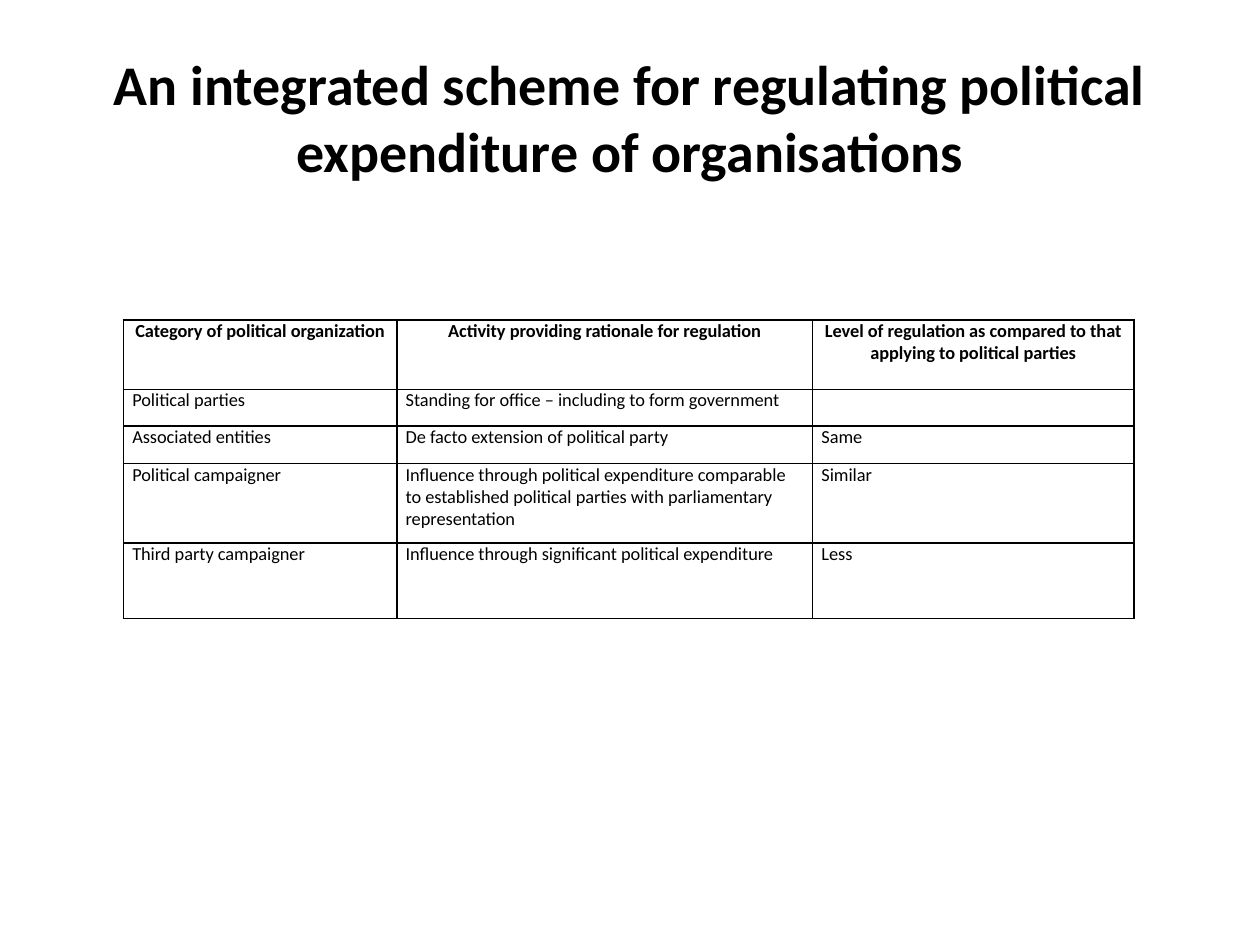
from lxml.etree import SubElement
from pptx import Presentation
from pptx.dml.color import RGBColor
from pptx.enum.text import MSO_ANCHOR, PP_ALIGN
from pptx.oxml.ns import qn
from pptx.util import Inches, Pt

COLORS = {"text": "000000", "border": "000000", "background": "FFFFFF"}
FONT = "Calibri"
TITLE = "An integrated scheme for regulating political expenditure of organisations"
COLUMN_WIDTHS = [2.17, 3.3, 2.55]
ROW_HEIGHTS = [0.55, 0.29, 0.3, 0.63, 0.6]
ROWS = [
    ["Category of political organization",
     "Activity providing rationale for regulation",
     "Level of regulation as compared to that applying to political parties"],
    ["Political parties", "Standing for office – including to form government", ""],
    ["Associated entities", "De facto extension of political party", "Same"],
    ["Political campaigner",
     "Influence through political expenditure comparable to established "
     "political parties with parliamentary representation",
     "Similar"],
    ["Third party campaigner", "Influence through significant political expenditure", "Less"],
]


def write_text(text_frame, text, size, bold, alignment):
    text_frame.text = text
    paragraph = text_frame.paragraphs[0]
    paragraph.alignment = alignment
    for run in paragraph.runs:
        run.font.name = FONT
        run.font.size = Pt(size)
        run.font.bold = bold
        run.font.color.rgb = RGBColor.from_string(COLORS["text"])
    if not text:
        # An empty cell must not stretch its row with the default text size
        paragraph._p.get_or_add_endParaRPr().set("sz", str(int(size * 100)))


def add_borders(cell):
    properties = cell._tc.get_or_add_tcPr()
    for side in ("lnL", "lnR", "lnT", "lnB"):
        line = SubElement(properties, qn(f"a:{side}"), w=str(Pt(1)))
        fill = SubElement(line, qn("a:solidFill"))
        SubElement(fill, qn("a:srgbClr"), val=COLORS["border"])


def add_title(slide, left, top, width, height):
    shape = slide.shapes.add_textbox(Inches(left), Inches(top), Inches(width), Inches(height))
    shape.text_frame.word_wrap = True
    shape.text_frame.vertical_anchor = MSO_ANCHOR.MIDDLE
    write_text(shape.text_frame, TITLE, 32, True, PP_ALIGN.CENTER)


def add_regulation_table(slide, left, top, width, height):
    table = slide.shapes.add_table(
        len(ROWS), len(COLUMN_WIDTHS),
        Inches(left), Inches(top), Inches(width), Inches(height)).table
    table.horz_banding = False
    for column, column_width in zip(table.columns, COLUMN_WIDTHS):
        column.width = Inches(column_width)
    for row, row_height in zip(table.rows, ROW_HEIGHTS):
        row.height = Inches(row_height)

    for row_index, texts in enumerate(ROWS):
        is_header = row_index == 0
        alignment = PP_ALIGN.CENTER if is_header else PP_ALIGN.LEFT
        for column_index, text in enumerate(texts):
            cell = table.cell(row_index, column_index)
            cell.margin_left = cell.margin_right = Inches(0.07)
            cell.margin_top = cell.margin_bottom = 0
            write_text(cell.text_frame, text, 10.5, is_header, alignment)
            # Borders come before the fill in the cell properties
            add_borders(cell)
            cell.fill.solid()
            cell.fill.fore_color.rgb = RGBColor.from_string(COLORS["background"])


def main():
    presentation = Presentation()
    presentation.slide_width = Inches(10)
    presentation.slide_height = Inches(7.5)
    slide = presentation.slides.add_slide(presentation.slide_layouts[6])
    add_title(slide, 0.5, 0.3, 9, 1.25)
    add_regulation_table(slide, 0.98, 2.54, sum(COLUMN_WIDTHS), sum(ROW_HEIGHTS))
    presentation.save("out.pptx")


if __name__ == "__main__":
    main()
